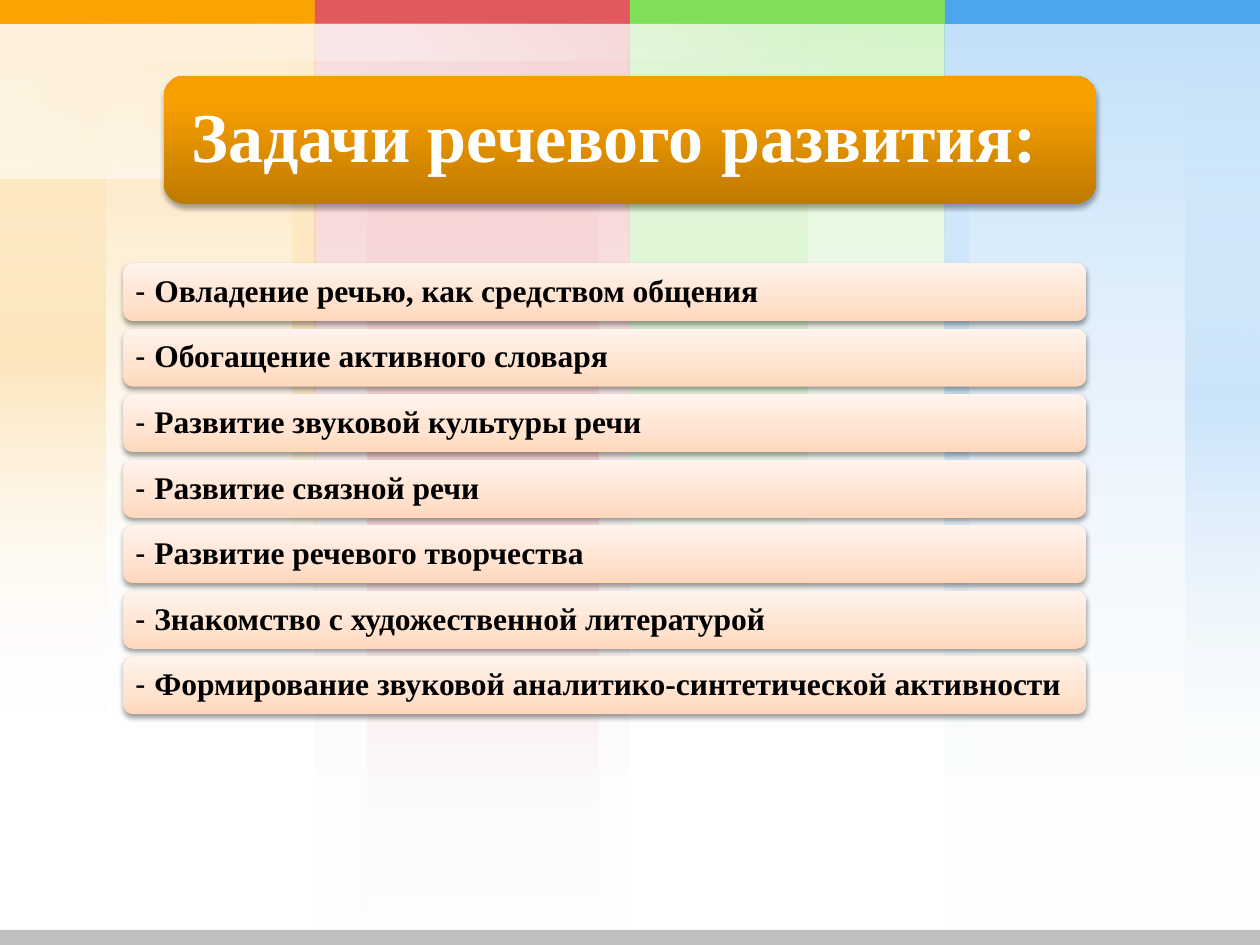
from lxml.etree import SubElement
from pptx import Presentation
from pptx.dml.color import RGBColor
from pptx.enum.shapes import MSO_SHAPE
from pptx.enum.text import MSO_ANCHOR, MSO_AUTO_SIZE, PP_ALIGN
from pptx.oxml.ns import qn
from pptx.util import Inches, Pt

ORANGE, RED, GREEN, BLUE = "FCA304", "E1595C", "80E05A", "4BA5EF"
WHITE, BLACK, GRAY = "FFFFFF", "000000", "C0C0C0"
SERIF, SANS = "Times New Roman", "Arial"
COLUMN_WIDTH = 2.5

TITLE = "Задачи речевого развития:"
TASKS = [
    "Овладение речью, как средством общения",
    "Обогащение активного словаря",
    "Развитие звуковой культуры речи",
    "Развитие связной речи",
    "Развитие речевого творчества",
    "Знакомство с художественной литературой",
    "Формирование звуковой аналитико-синтетической активности",
]
TITLE_STOPS = [(0, "BF7A00", 100), (80, "F89F00", 100), (100, "F9A000", 100)]
TASK_STOPS = [(0, "FFD7BB", 100), (35, "FFE2CF", 100), (100, "FFF4ED", 100)]


def rgb(color):
    return RGBColor.from_string(color)


def add_color(parent, color, opacity):
    node = SubElement(parent, qn("a:srgbClr"), val=color)
    SubElement(node, qn("a:alpha"), val=str(opacity * 1000))


def add_box(page, at, kind=MSO_SHAPE.RECTANGLE):
    box = page.shapes.add_shape(kind, *map(Inches, at))
    box.line.fill.background()
    box.shadow.inherit = False
    return box


def add_solid(page, at, color):
    box = add_box(page, at)
    box.fill.solid()
    box.fill.fore_color.rgb = rgb(color)


def set_gradient(box, stops, upward=False):
    """Fill with vertical (position, color, opacity) stops, all but color in percent."""
    box.fill.gradient()
    box.fill.gradient_angle = 90 if upward else 270
    stop_list = box._element.spPr.find(".//" + qn("a:gsLst"))
    for stop in list(stop_list):
        stop_list.remove(stop)
    for position, color, opacity in stops:
        stop = SubElement(stop_list, qn("a:gs"), pos=str(position * 1000))
        add_color(stop, color, opacity)


def add_fade(page, at, color, opacity, rotation=0):
    """Add a veil that fades out downward."""
    box = add_box(page, at)
    box.rotation = rotation
    set_gradient(box, [(0, color, opacity), (100, WHITE, 0)])


def add_glow(page, at, color, opacity, rotation=0):
    """Add a veil that is strongest halfway down."""
    box = add_box(page, at)
    box.rotation = rotation
    set_gradient(box, [(0, WHITE, 0), (50, color, opacity), (100, WHITE, 0)])


def add_panel(page, at, stops, opacity, distance):
    """Add a rounded gradient panel with a soft shadow below it."""
    box = add_box(page, at, MSO_SHAPE.ROUNDED_RECTANGLE)
    set_gradient(box, stops, upward=True)
    effects = box._element.spPr.find(qn("a:effectLst"))
    shadow = SubElement(effects, qn("a:outerShdw"), blurRad=str(Pt(3.1)),
                        dist=str(Pt(distance)), dir="5400000", rotWithShape="0")
    add_color(shadow, BLACK, opacity)
    return box


def format_frame(frame, inset):
    frame.word_wrap = True
    frame.auto_size = MSO_AUTO_SIZE.NONE
    frame.vertical_anchor = MSO_ANCHOR.MIDDLE
    frame.margin_left = frame.margin_right = Inches(inset)
    frame.margin_top = frame.margin_bottom = Inches(inset)
    para = frame.paragraphs[0]
    para.alignment = PP_ALIGN.LEFT
    para.line_spacing = 0.9
    return para


def add_background(page):
    columns = [
        (RED, 7.5, [(2.92, 1.83)]),
        (GREEN, 5.62, [(5, 1.41)]),
        (BLUE, 7.47, [(7.5, 0.19), (9.41, 0.59)]),
        (ORANGE, 5.62, [(2.32, 0.18), (0, 0.84)]),
    ]
    lefts = {color: index * COLUMN_WIDTH
             for index, color in enumerate((ORANGE, RED, GREEN, BLUE))}
    for color, height, glows in columns:
        area = (lefts[color], 0, COLUMN_WIDTH, height)
        add_fade(page, area, color, 20)
        for left, width in glows:
            glow_height = 6.37 if color == BLUE else height
            add_glow(page, (left, 0, width, glow_height), color, 20)
        add_fade(page, area, color, 20)
    for color, left in lefts.items():
        add_solid(page, (left, 0, COLUMN_WIDTH, 0.19), color)

    sheen = (3.15, -2.95, 1.22, 7.51)
    add_glow(page, (4.16, -2.85, 0.1, 8.42), WHITE, 35, 270)
    add_fade(page, sheen, WHITE, 35, 270)
    add_glow(page, (3.06, -2.87, 0.29, 6.41), WHITE, 35, 270)
    add_fade(page, sheen, WHITE, 35, 270)
    add_solid(page, (0, 7.38, 10, 0.12), GRAY)


def add_title(page):
    add_panel(page, (1.3, 0.6, 7.4, 1.02), TITLE_STOPS, 35, 1.8)
    title = page.shapes.title
    page.shapes._spTree.append(title._element)  # bring in front of the panel
    title.left, title.top = Inches(1.35), Inches(0.65)
    title.width, title.height = Inches(7.3), Inches(0.92)
    title.text_frame.text = TITLE
    font = format_frame(title.text_frame, 0.17).font
    font.name, font.size, font.bold = SERIF, Pt(40), True
    font.color.rgb = rgb(WHITE)


def add_task(page, top, task):
    box = add_panel(page, (0.98, top, 7.64, 0.46), TASK_STOPS, 38, 1.6)
    para = format_frame(box.text_frame, 0.07)
    para.font.size = Pt(18)
    para.font.color.rgb = rgb(BLACK)
    for text, name, bold in (("- ", SANS, False), (task, SERIF, True)):
        span = para.add_run()
        span.text = text
        span.font.name, span.font.bold = name, bold


def main():
    deck = Presentation()
    deck.slide_width, deck.slide_height = Inches(10), Inches(7.5)
    page = deck.slides.add_slide(deck.slide_layouts.get_by_name("Title Only"))
    add_background(page)
    add_title(page)
    for index, task in enumerate(TASKS):
        add_task(page, 2.09 + index * 0.52, task)
    deck.save("out.pptx")


if __name__ == "__main__":
    main()
